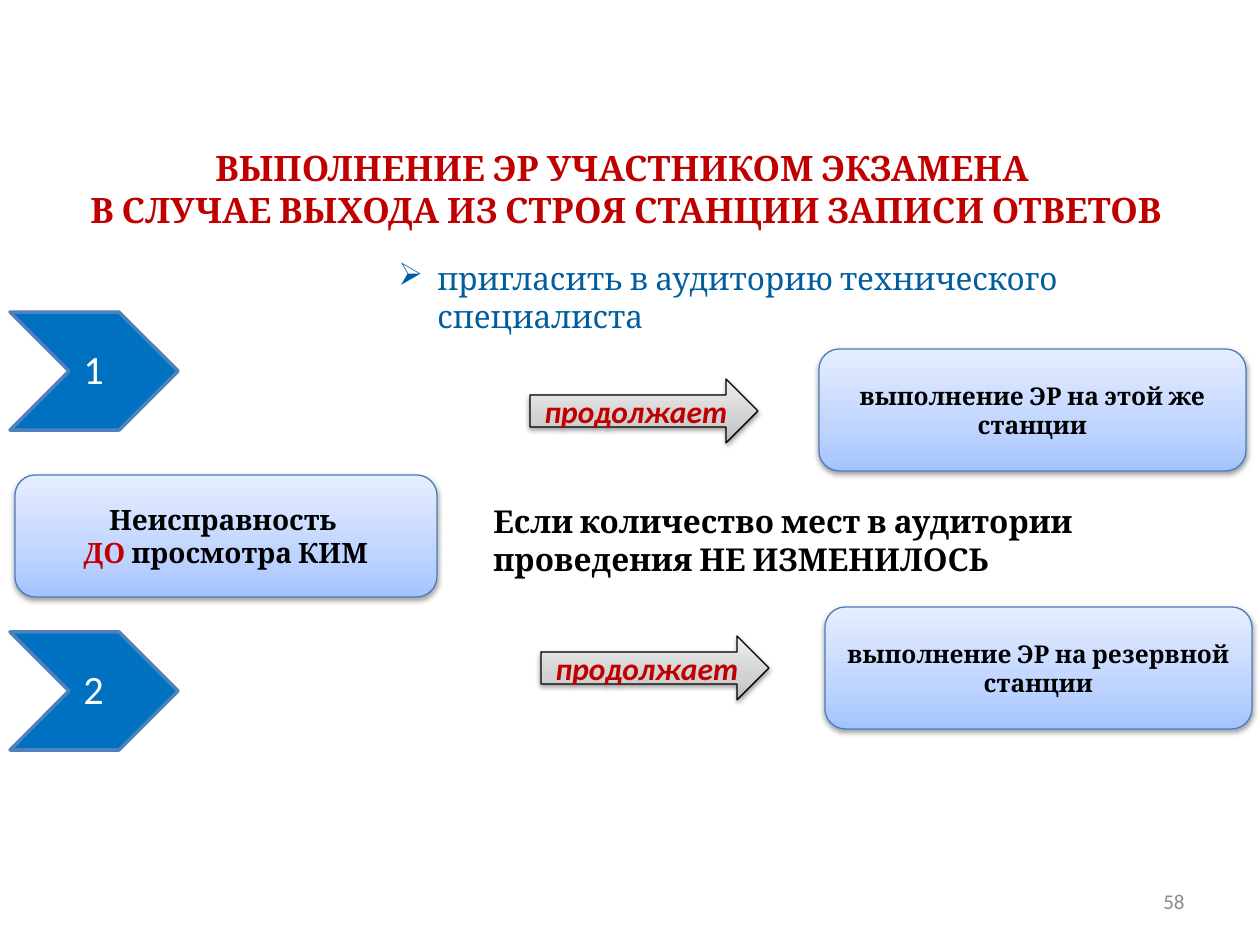
import lxml.etree
import pptx
import pptx.dml.color
import pptx.enum.shapes
import pptx.enum.text
import pptx.oxml
import pptx.oxml.ns
import pptx.util

PIXEL = 914400 / 126
COLORS = {
    "red": "C00000", "black": "000000", "white": "FFFFFF", "gray": "8C8C8C",
    "blue text": "005E9E", "chevron": "0070C0", "chevron edge": "4F81BD",
    "card edge": "4B7EBC",
}
CARD_STOPS = {0: "A4C4FF", 35: "BFD4FF", 100: "E6EEFF"}
ARROW_STOPS = {0: "BDBDBD", 35: "D1D1D1", 100: "EEEEEE"}
LEFT, CENTER, RIGHT = (pptx.enum.text.PP_ALIGN.LEFT, pptx.enum.text.PP_ALIGN.CENTER,
                       pptx.enum.text.PP_ALIGN.RIGHT)
TOP, MIDDLE = pptx.enum.text.MSO_ANCHOR.TOP, pptx.enum.text.MSO_ANCHOR.MIDDLE
SHAPES = pptx.enum.shapes.MSO_SHAPE
NAMESPACE = pptx.oxml.ns.nsdecls("a")


def write(shape, paragraphs, font, align=CENTER, anchor=MIDDLE):
    """Fill a shape with paragraphs, each a list of (text, color name) runs."""
    frame = shape.text_frame
    frame.word_wrap = True
    frame.vertical_anchor = anchor
    for index, runs in enumerate(paragraphs):
        paragraph = frame.add_paragraph() if index else frame.paragraphs[0]
        paragraph.alignment = align
        for text, color in runs:
            if text == "\n":
                paragraph.add_line_break()
                continue
            run = paragraph.add_run()
            run.text = text
            for name, value in font.items():
                setattr(run.font, name, value)
            run.font.color.rgb = pptx.dml.color.RGBColor.from_string(COLORS[color])


def add_shaded(shapes, kind, box, stops, edge):
    """Add a shape with an upward gradient and a soft shadow below it."""
    shape = shapes.add_shape(kind, *[round(length * PIXEL) for length in box])
    shape.line.color.rgb = pptx.dml.color.RGBColor.from_string(COLORS[edge])
    shape.line.width = pptx.util.Pt(0.75)
    stop_xml = "".join(f'<a:gs pos="{position * 1000}"><a:srgbClr val="{color}"/></a:gs>'
                       for position, color in stops.items())
    shape.line._get_or_add_ln().addprevious(pptx.oxml.parse_xml(
        f'<a:gradFill {NAMESPACE} rotWithShape="1"><a:gsLst>{stop_xml}</a:gsLst>'
        '<a:lin ang="16200000" scaled="0"/></a:gradFill>'))
    shape.shadow.inherit = False
    effects = shape._element.spPr.find(pptx.oxml.ns.qn("a:effectLst"))
    effects.append(pptx.oxml.parse_xml(
        f'<a:outerShdw {NAMESPACE} blurRad="40000" dist="20000" dir="5400000" '
        'rotWithShape="0"><a:srgbClr val="000000"><a:alpha val="38000"/>'
        '</a:srgbClr></a:outerShdw>'))
    return shape


presentation = pptx.Presentation()
presentation.slide_width = round(1260 * PIXEL)
presentation.slide_height = round(945 * PIXEL)
slide = presentation.slides.add_slide(presentation.slide_layouts[6])

# Page number, title, instruction and condition
texts = [
    ((903, 876, 294, 50), [("58", "gray")],
     {"name": "Calibri", "size": pptx.util.Pt(12)}, RIGHT, MIDDLE),
    ((59, 110, 1134, 157),
     [("ВЫПОЛНЕНИЕ ЭР УЧАСТНИКОМ ЭКЗАМЕНА ", "red"), ("\n", "red"),
      ("В СЛУЧАЕ ВЫХОДА ИЗ СТРОЯ СТАНЦИИ ЗАПИСИ ОТВЕТОВ", "red")],
     {"name": "Cambria", "size": pptx.util.Pt(20), "bold": True}, CENTER, MIDDLE),
    ((386, 253, 824, 50),
     [("пригласить в аудиторию технического специалиста", "blue text")],
     {"name": "Cambria", "size": pptx.util.Pt(18)}, LEFT, TOP),
    ((481, 496, 615, 89),
     [("Если количество мест в аудитории проведения НЕ ИЗМЕНИЛОСЬ", "black")],
     {"name": "Cambria", "size": pptx.util.Pt(18), "bold": True}, LEFT, TOP),
]
for box, runs, font, align, anchor in texts:
    text_box = slide.shapes.add_textbox(*[round(length * PIXEL) for length in box])
    write(text_box, [runs], font, align, anchor)
    if runs[0][1] == "blue text":
        properties = text_box.text_frame.paragraphs[0]._p.get_or_add_pPr()
        indent = round(39 * PIXEL)
        properties.set("marL", str(indent))
        properties.set("indent", str(-indent))
        bullet = lxml.etree.SubElement(properties, pptx.oxml.ns.qn("a:buChar"))
        bullet.set("char", "➢")

# Fault card and the two ways to continue
cards = [
    ((15, 475, 422, 122), 16,
     [[("Неисправность ", "black")], [("ДО", "red"), (" просмотра КИМ", "black")]]),
    ((819, 349, 427, 122), 14, [[("выполнение ЭР на этой же станции", "black")]]),
    ((825, 607, 427, 122), 14, [[("выполнение ЭР на резервной станции", "black")]]),
]
for box, size, paragraphs in cards:
    card = add_shaded(slide.shapes, SHAPES.ROUNDED_RECTANGLE, box, CARD_STOPS, "card edge")
    write(card, paragraphs, {"name": "Cambria", "size": pptx.util.Pt(size), "bold": True})

for left, top in [(530, 379), (541, 636)]:
    arrow = add_shaded(slide.shapes, SHAPES.RIGHT_ARROW, (left, top, 228, 64),
                       ARROW_STOPS, "black")
    write(arrow, [[("продолжает", "red")]],
          {"name": "Calibri", "size": pptx.util.Pt(18), "bold": True, "italic": True})

# Numbered chevrons
for number, top in [("1", 312), ("2", 632)]:
    group = slide.shapes.add_group_shape()
    box = (10, top, 168, 118)
    chevron = group.shapes.add_shape(SHAPES.CHEVRON, *[round(length * PIXEL) for length in box])
    chevron.shadow.inherit = False
    chevron.fill.solid()
    chevron.fill.fore_color.rgb = pptx.dml.color.RGBColor.from_string(COLORS["chevron"])
    chevron.line.color.rgb = pptx.dml.color.RGBColor.from_string(COLORS["chevron edge"])
    chevron.line.width = pptx.util.Pt(2)
    box = (35, top + 34, 117, 50)
    label = group.shapes.add_textbox(*[round(length * PIXEL) for length in box])
    for side in ("left", "top", "right", "bottom"):
        setattr(label.text_frame, f"margin_{side}", pptx.util.Inches(0.02))
    write(label, [[(number, "white")]], {"name": "Calibri", "size": pptx.util.Pt(23)})
    label.text_frame.paragraphs[0].line_spacing = 0.9

presentation.save("out.pptx")
